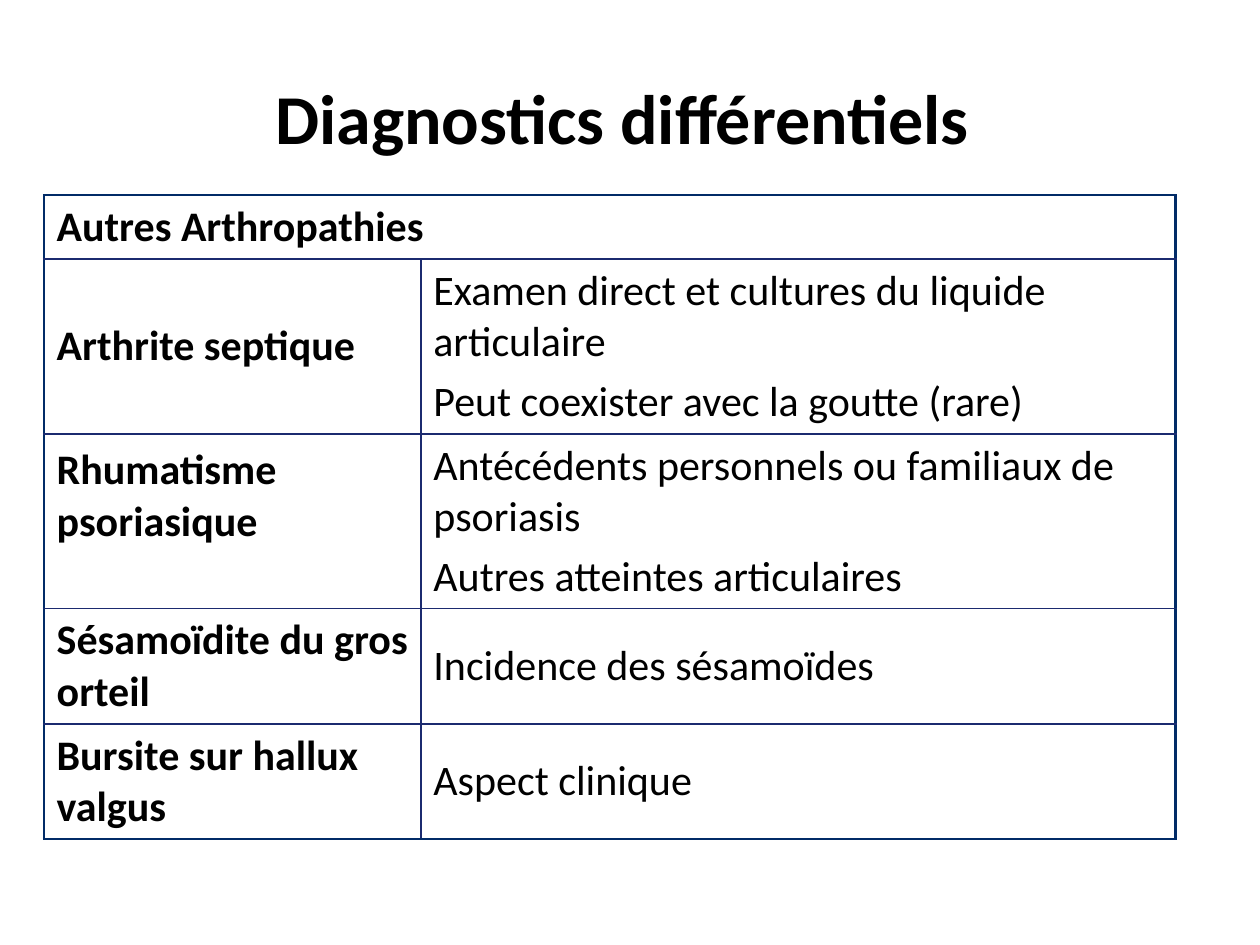
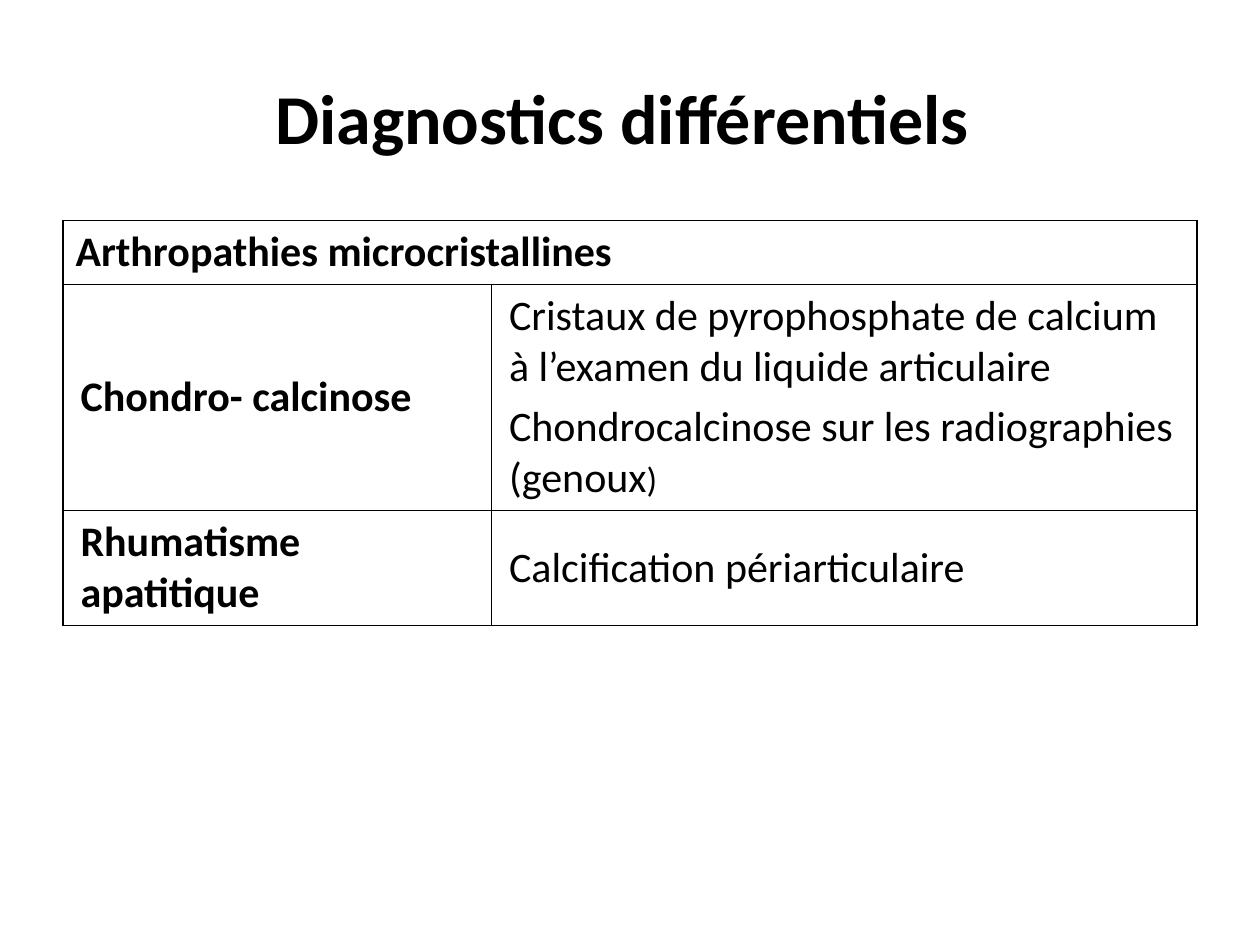
from lxml.etree import SubElement
from pptx import Presentation
from pptx.dml.color import RGBColor
from pptx.enum.text import MSO_ANCHOR, PP_ALIGN
from pptx.oxml import parse_xml
from pptx.oxml.ns import nsdecls, qn
from pptx.util import Inches, Pt

COLORS = {"text": "000000", "frame": "012B67", "grid": "1B2A6F", "black": "000000"}
FONT = "Calibri"
TITLE = "Diagnostics différentiels "
TITLE_ONLY = 5

OTHER_ARTHROPATHIES = [
    ("Arthrite septique",
     [["Examen direct et cultures du liquide articulaire"],
      ["Peut coexister avec la goutte (rare)"]]),
    ("Rhumatisme psoriasique",
     [["Antécédents personnels ou familiaux de psoriasis"],
      ["Autres atteintes articulaires"]]),
    ("Sésamoïdite du gros orteil", [["Incidence des sésamoïdes"]]),
    ("Bursite sur hallux valgus", [["Aspect clinique"]]),
]
CRYSTAL_ARTHROPATHIES = [
    ("Chondro- calcinose",
     [["Cristaux de pyrophosphate de calcium à l’examen du liquide articulaire"],
      ["Chondrocalcinose sur les radiographies (genoux", (")", 20)]]),
    ("Rhumatisme apatitique", [["Calcification périarticulaire"]]),
]


def add_run(paragraph, text, size=24, bold=False):
    run = paragraph.add_run()
    run.text = text
    run.font.name = FONT
    run.font.size = Pt(size)
    run.font.bold = bold
    run.font.color.rgb = RGBColor.from_string(COLORS["text"])


def add_titled_slide(deck):
    slide = deck.slides.add_slide(deck.slide_layouts[TITLE_ONLY])
    title = slide.shapes.title
    title.left, title.top = Inches(0.5), Inches(0.3)
    title.width, title.height = Inches(9), Inches(1.25)
    title.text_frame.vertical_anchor = MSO_ANCHOR.MIDDLE
    heading = title.text_frame.paragraphs[0]
    heading.alignment = PP_ALIGN.CENTER
    add_run(heading, TITLE, 40, True)
    return slide


def fill_cell(cell, paragraphs, bold=False, side_margin=0.1):
    cell.vertical_anchor = MSO_ANCHOR.MIDDLE
    cell.margin_left = cell.margin_right = Inches(side_margin)
    cell.margin_top = cell.margin_bottom = Inches(0.05)
    frame = cell.text_frame
    for index, pieces in enumerate(paragraphs):
        paragraph = frame.add_paragraph() if index else frame.paragraphs[0]
        if index:
            paragraph.space_before = Pt(4.8)
        for piece in pieces:
            text, size = piece if isinstance(piece, tuple) else (piece, 24)
            add_run(paragraph, text, size, bold)


def set_borders(cell, edges):
    properties = cell._tc.get_or_add_tcPr()
    for position, (side, (color, width)) in enumerate(edges.items()):
        line = parse_xml(f'<a:ln{side} {nsdecls("a")} w="{Pt(width)}"/>')
        fill = SubElement(line, qn("a:solidFill"))
        SubElement(fill, qn("a:srgbClr"), val=COLORS[color])
        properties.insert(position, line)


def frame_table(table, outer, inner):
    last_row, last_column = len(table.rows) - 1, len(table.columns) - 1
    for r in range(last_row + 1):
        for c in range(last_column + 1):
            cell = table.cell(r, c)
            cell.fill.background()
            set_borders(cell, {
                "L": outer if c == 0 else inner,
                "R": outer if c == last_column or r == 0 else inner,
                "T": outer if r == 0 else inner,
                "B": outer if r == last_row else inner,
            })


def add_diagnosis_table(slide, corner, widths, heights, header, diagnoses,
                        outer, inner, side_margin=0.1):
    left, top = corner
    table = slide.shapes.add_table(
        len(heights), len(widths), Inches(left), Inches(top),
        Inches(sum(widths)), Inches(sum(heights))).table
    table.first_row = table.horz_banding = False
    for column, width in zip(table.columns, widths):
        column.width = Inches(width)
    for row, height in zip(table.rows, heights):
        row.height = Inches(height)
    table.cell(0, 0).merge(table.cell(0, 1))
    fill_cell(table.cell(0, 0), [[header]], bold=True)
    for r, (disease, clues) in enumerate(diagnoses, 1):
        fill_cell(table.cell(r, 0), [[disease]], True, side_margin)
        fill_cell(table.cell(r, 1), clues, False, side_margin)
    frame_table(table, outer, inner)
    return table


def main():
    deck = Presentation()
    deck.slide_width, deck.slide_height = Inches(10), Inches(7.5)

    others = add_diagnosis_table(
        add_titled_slide(deck), (0.35, 1.55), [2.99, 5.99],
        [0.5, 1.38, 1.38, 0.91, 0.91], "Autres Arthropathies",
        OTHER_ARTHROPATHIES, ("frame", 1.5), ("grid", 1))
    psoriatic = others.cell(2, 0)
    psoriatic.margin_bottom = Inches(0.45)

    add_diagnosis_table(
        add_titled_slide(deck), (0.5, 1.75), [3.4, 5.6],
        [0.5, 1.78, 0.91], "Arthropathies microcristallines",
        CRYSTAL_ARTHROPATHIES, ("black", 1), ("black", 1), side_margin=0.14)

    deck.save("out.pptx")


if __name__ == "__main__":
    main()
